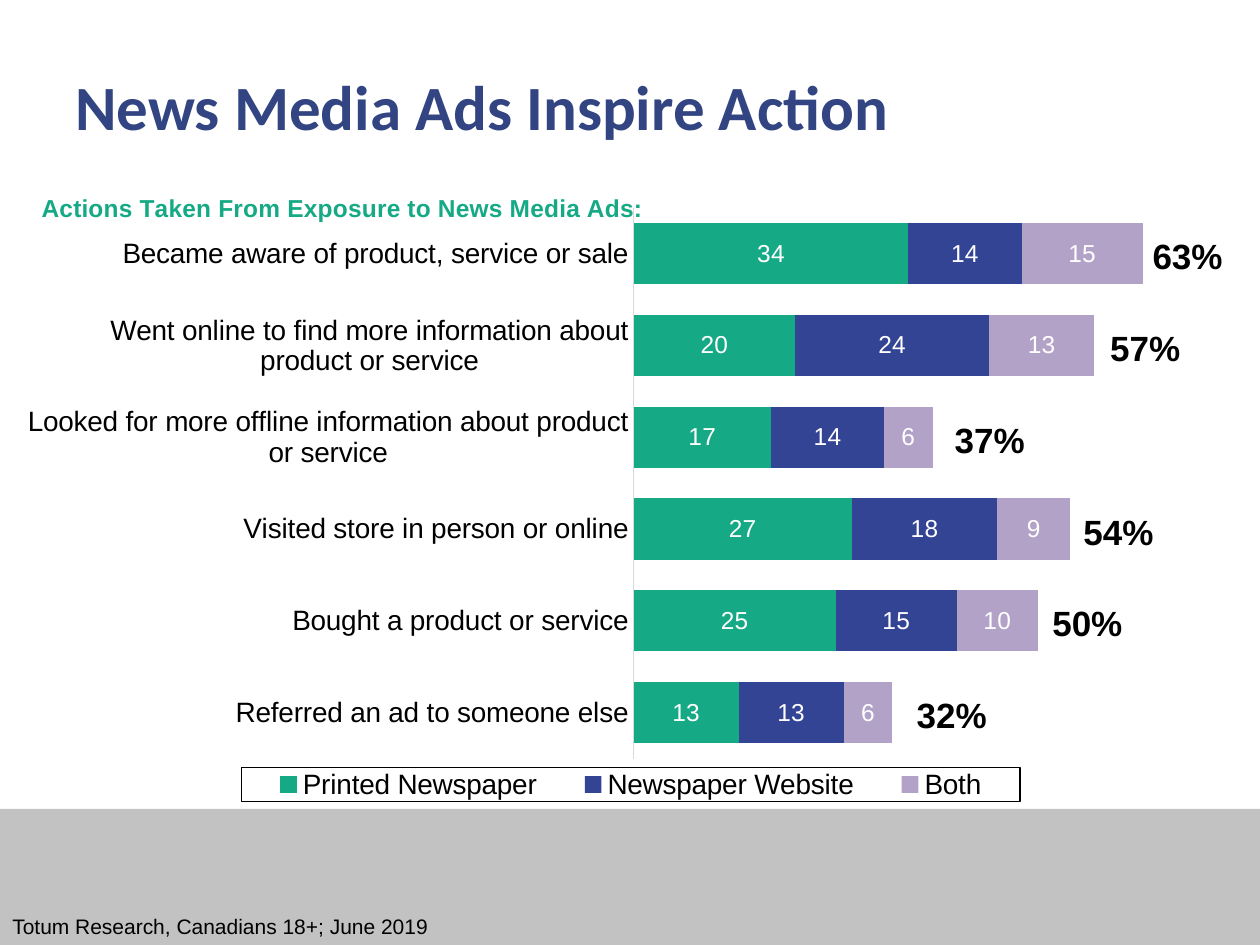
from lxml import etree
from pptx import Presentation
from pptx.chart.data import CategoryChartData
from pptx.dml.color import RGBColor
from pptx.enum.chart import XL_CHART_TYPE as CT, XL_LABEL_POSITION as LP
from pptx.enum.chart import XL_LEGEND_POSITION as LEG, XL_TICK_MARK as TM
from pptx.enum.shapes import MSO_SHAPE as SHP
from pptx.enum.text import MSO_ANCHOR as ANC, MSO_AUTO_SIZE as FIT
from pptx.oxml.ns import qn
from pptx.util import Inches, Pt

BLACK = RGBColor(0x00, 0x00, 0x00)
WHITE = RGBColor(0xFF, 0xFF, 0xFF)
GREY = RGBColor(0xC2, 0xC2, 0xC2)
RULE = RGBColor(0xD9, 0xD9, 0xD9)
NAVY = RGBColor(0x32, 0x44, 0x81)
GREEN = RGBColor(0x16, 0xA9, 0x85)
BLUE = RGBColor(0x33, 0x44, 0x95)
LILAC = RGBColor(0xB3, 0xA2, 0xC7)

W, H = 10, 7.5
CHART_BOX = (0.22, 1.14, 9.45, 5.46)
PLOT = (0.508, 0.093, 0.476, 0.801)  # shares of the chart box
TITLE_AT = (0.006, 0.064)
LEGEND = (0.178, 0.907, 0.655, 0.049)
AXIS_MAX = 70
TOTAL_W, TOTAL_H = 0.76, 0.44

# action, (printed, website, both), gap from bar end to total box in inches
ACTIONS = [
    ("Became aware of product, service or sale", (34, 14, 15), -0.02),
    ("Went online to find more information about product or service", (20, 24, 13), 0.03),
    ("Looked for more offline information about product or service", (17, 14, 6), 0.08),
    ("Visited store in person or online", (27, 18, 9), 0.01),
    ("Bought a product or service", (25, 15, 10), 0.02),
    ("Referred an ad to someone else", (13, 13, 6), 0.1),
]
SERIES = [("Printed Newspaper", GREEN), ("Newspaper Website", BLUE), ("Both", LILAC)]


def set_font(font, size, color=BLACK, bold=False, name="Arial"):
    font.name, font.size, font.bold = name, Pt(size), bold
    font.color.rgb = color


def add_text(slide, text, box, wrap=False, anchor=ANC.TOP, **fmt):
    tf = slide.shapes.add_textbox(*map(Inches, box)).text_frame
    tf.word_wrap, tf.vertical_anchor = wrap, anchor
    tf.auto_size = FIT.NONE if wrap else FIT.SHAPE_TO_FIT_TEXT
    r = tf.paragraphs[0].add_run()
    r.text = text
    set_font(r.font, **fmt)


def set_layout(element, after, place, inner=False):
    """Fix a chart part at shares of the chart box."""
    for old in element.findall(qn("c:layout")):
        element.remove(old)
    layout = etree.Element(qn("c:layout"))
    manual = etree.SubElement(layout, qn("c:manualLayout"))
    items = [("layoutTarget", "inner")] if inner else []
    items += [("xMode", "edge"), ("yMode", "edge"), *zip("xywh", place)]
    for tag, value in items:
        etree.SubElement(manual, qn("c:" + tag)).set("val", str(value))
    if after is None:
        element.insert(0, layout)
    else:
        element.find(qn(after)).addnext(layout)


def add_legend_border(legend):
    sp_pr = etree.Element(qn("c:spPr"))
    ln = etree.SubElement(sp_pr, qn("a:ln"), w=str(Pt(0.75)))
    fill = etree.SubElement(ln, qn("a:solidFill"))
    etree.SubElement(fill, qn("a:srgbClr"), val=str(BLACK))
    legend.find(qn("c:txPr")).addprevious(sp_pr)


def add_actions_chart(slide, box):
    rows = ACTIONS[::-1]
    data = CategoryChartData()
    data.categories = [action for action, _, _ in rows]
    for i, (name, _) in enumerate(SERIES):
        data.add_series(name, [values[i] for _, values, _ in rows])
    chart = slide.shapes.add_chart(CT.BAR_STACKED, *map(Inches, box), data).chart
    set_font(chart.font, 10, name="League Spartan")

    plot = chart.plots[0]
    plot.gap_width, plot.overlap, plot.vary_by_categories = 50, 100, False
    for series, (_, color) in zip(plot.series, SERIES):
        series.format.fill.solid()
        series.format.fill.fore_color.rgb = color
        labels = series.data_labels
        labels.show_value, labels.position = True, LP.CENTER
        set_font(labels.font, 14, WHITE)

    cat, val = chart.category_axis, chart.value_axis
    cat.major_tick_mark = cat.minor_tick_mark = TM.NONE
    cat.format.line.color.rgb, cat.format.line.width = RULE, Pt(0.75)
    set_font(cat.tick_labels.font, 16)
    val.minimum_scale, val.maximum_scale = 0, AXIS_MAX
    val.has_major_gridlines = val.visible = False

    chart.has_title = True
    title = chart.chart_title
    r = title.text_frame.paragraphs[0].add_run()
    r.text = "Actions Taken From Exposure to News Media Ads:"
    set_font(r.font, 14, GREEN, bold=True)
    title.include_in_layout = False

    chart.has_legend = True
    legend = chart.legend
    legend.position, legend.include_in_layout = LEG.BOTTOM, False
    set_font(legend.font, 16)

    area = chart.element.find(".//" + qn("c:plotArea"))
    legend_xml = chart.element.find(".//" + qn("c:legend"))
    set_layout(area, None, PLOT, inner=True)
    set_layout(chart.element.find(".//" + qn("c:title")), "c:tx", TITLE_AT)
    set_layout(legend_xml, "c:legendPos", LEGEND)
    add_legend_border(legend_xml)


def add_totals(slide, box):
    """Put each row's total just past the end of its bar."""
    x, y, w, h = box
    left, top = x + PLOT[0] * w, y + PLOT[1] * h
    unit, row_h = PLOT[2] * w / AXIS_MAX, PLOT[3] * h / len(ACTIONS)
    for i, (_, values, gap) in enumerate(ACTIONS):
        total = sum(values)
        middle = top + (i + 0.5) * row_h + 0.02
        place = (left + total * unit + gap, middle - TOTAL_H / 2, TOTAL_W, TOTAL_H)
        add_text(slide, f"{total}%", place, size=20, bold=True)


def add_footer_band(slide, box):
    sp = slide.shapes.add_shape(SHP.RECTANGLE, *map(Inches, box))
    sp.shadow.inherit = False
    sp.fill.solid()
    sp.fill.fore_color.rgb = GREY
    sp.line.fill.background()


def main():
    prs = Presentation()
    prs.slide_width, prs.slide_height = Inches(W), Inches(H)
    slide = prs.slides.add_slide(prs.slide_layouts[6])
    add_footer_band(slide, (0, 0.856 * H, W, 0.144 * H))
    add_text(slide, "News Media Ads Inspire Action", (0.05 * W, 0.04 * H, 7.59, 1.07),
             wrap=True, anchor=ANC.MIDDLE, size=36, color=NAVY, bold=True, name="Calibri")
    add_actions_chart(slide, CHART_BOX)
    add_text(slide, "Totum Research, Canadians 18+; June 2019",
             (0, 0.96 * H, 3.53, 0.04 * H), size=12)
    add_totals(slide, CHART_BOX)
    prs.save("out.pptx")


if __name__ == "__main__":
    main()
